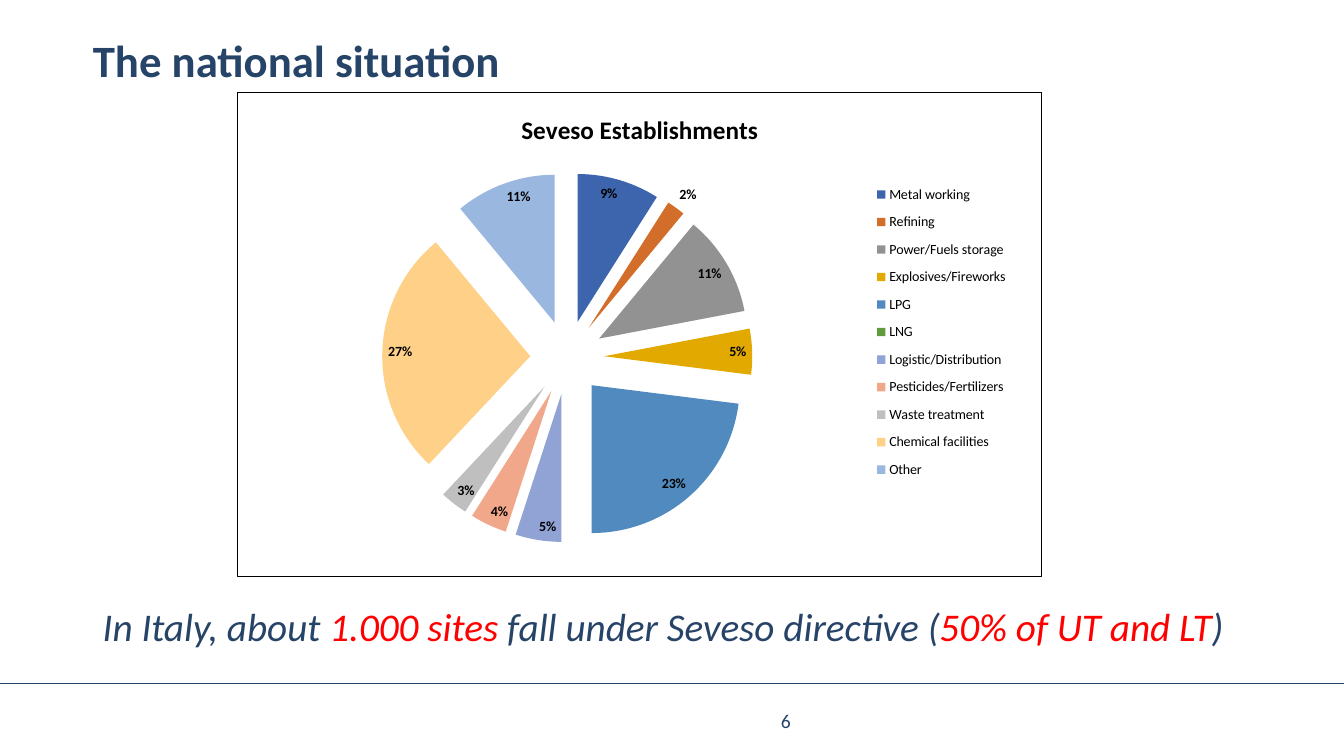
"""Build the slide on Seveso establishments in Italy."""
from lxml import etree
from pptx import Presentation
from pptx.chart.data import CategoryChartData
from pptx.dml.color import RGBColor
from pptx.enum.chart import XL_CHART_TYPE, XL_LABEL_POSITION, XL_LEGEND_POSITION
from pptx.enum.shapes import MSO_CONNECTOR
from pptx.enum.text import MSO_ANCHOR
from pptx.oxml import parse_xml
from pptx.oxml.ns import nsdecls, qn
from pptx.util import Cm, Pt

PIE = XL_CHART_TYPE.PIE
INSIDE = XL_LABEL_POSITION.INSIDE_END
OUTSIDE = XL_LABEL_POSITION.OUTSIDE_END
RIGHT = XL_LEGEND_POSITION.RIGHT
STRAIGHT = MSO_CONNECTOR.STRAIGHT
TOP = MSO_ANCHOR.TOP
MIDDLE = MSO_ANCHOR.MIDDLE

NAVY = RGBColor(0x26, 0x43, 0x68)
RED = RGBColor(0xFF, 0x00, 0x00)
BLACK = RGBColor(0x00, 0x00, 0x00)
WHITE = RGBColor(0xFF, 0xFF, 0xFF)
COBALT = RGBColor(0x3D, 0x65, 0xAD)
RUST = RGBColor(0xD2, 0x6E, 0x2A)
GREY = RGBColor(0x92, 0x92, 0x92)
GOLD = RGBColor(0xE2, 0xAA, 0x00)
BLUE = RGBColor(0x50, 0x8A, 0xBE)
GREEN = RGBColor(0x62, 0x9A, 0x3E)
LILAC = RGBColor(0x91, 0xA2, 0xD4)
SALMON = RGBColor(0xF1, 0xA7, 0x8A)
SILVER = RGBColor(0xBF, 0xBF, 0xBF)
PEACH = RGBColor(0xFE, 0xD0, 0x88)
SKY = RGBColor(0x9A, 0xB7, 0xDF)

SITES = [
    ("Metal working", 9, COBALT),
    ("Refining", 2, RUST),
    ("Power/Fuels storage", 11, GREY),
    ("Explosives/Fireworks", 5, GOLD),
    ("LPG", 23, BLUE),
    ("LNG", 0, GREEN),
    ("Logistic/Distribution", 5, LILAC),
    ("Pesticides/Fertilizers", 4, SALMON),
    ("Waste treatment", 3, SILVER),
    ("Chemical facilities", 27, PEACH),
    ("Other", 11, SKY),
]


class Deck:
    """Hold the style and the current slide."""

    def __init__(self, font, color):
        self.font, self.color = font, color
        self.show = Presentation()
        self.show.slide_width, self.show.slide_height = Cm(33.87), Cm(19.05)
        self.slide = self.show.slides.add_slide(self.show.slide_layouts[6])

    def style(self, font, size, color, bold=False, italic=False):
        font.name, font.size = self.font, Pt(size)
        font.color.rgb = color
        font.bold, font.italic = bold, italic

    def text(self, box, parts, size, pad=(0.25, 0.13), anchor=TOP, gap=None, **look):
        frame = self.slide.shapes.add_textbox(*map(Cm, box)).text_frame
        frame.word_wrap = True
        frame.vertical_anchor = anchor
        frame.margin_left = frame.margin_right = Cm(pad[0])
        frame.margin_top = frame.margin_bottom = Cm(pad[1])
        para = frame.paragraphs[0]
        para.line_spacing = gap
        for words, color in parts:
            run = para.add_run()
            run.text = words
            self.style(run.font, size, color, **look)

    def rule(self, left, right, top):
        line = self.slide.shapes.add_connector(
            STRAIGHT, Cm(left), Cm(top), Cm(right), Cm(top))
        line.line.color.rgb = self.color
        line.line.width = Pt(1)
        etree.SubElement(line._element.spPr, qn("a:effectLst"))

    def layout(self, x, y, w, h, inner=""):
        return parse_xml(
            f'<c:layout {nsdecls("c")}><c:manualLayout>{inner}'
            '<c:xMode val="edge"/><c:yMode val="edge"/>'
            f'<c:x val="{x}"/><c:y val="{y}"/><c:w val="{w}"/><c:h val="{h}"/>'
            '</c:manualLayout></c:layout>')

    def pie(self, box, title, rows, burst):
        data = CategoryChartData()
        data.categories = [name for name, _, _ in rows]
        data.add_series(title, [value for _, value, _ in rows])
        chart = self.slide.shapes.add_chart(PIE, *map(Cm, box), data).chart
        self.style(chart.font, 10, BLACK)
        chart.has_title = True
        chart.chart_title.text_frame.text = title
        head = chart.chart_title.text_frame.paragraphs[0].runs[0]
        self.style(head.font, 18, BLACK, bold=True)
        self.legend(chart)
        self.frame(chart)
        plot = chart.plots[0]
        plot.vary_by_categories = True
        self.slices(plot.series[0], rows, burst)

    def legend(self, chart):
        chart.has_legend = True
        key = chart.legend
        key.position, key.include_in_layout = RIGHT, False
        self.style(key.font, 10, BLACK)
        key._element.find(qn("c:legendPos")).addnext(
            self.layout(0.78, 0.17, 0.19, 0.65))

    def frame(self, chart):
        area = chart._chartSpace.chart.plotArea
        for old in area.findall(qn("c:layout")):
            area.remove(old)
        area.insert(0, self.layout(
            0.18, 0.165, 0.46, 0.765, '<c:layoutTarget val="inner"/>'))
        chart._chartSpace.chart.addnext(parse_xml(
            f'<c:spPr {nsdecls("c", "a")}>'
            f'<a:solidFill><a:srgbClr val="{WHITE}"/></a:solidFill>'
            f'<a:ln w="{Pt(0.75)}"><a:solidFill><a:srgbClr val="{BLACK}"/>'
            '</a:solidFill></a:ln></c:spPr>'))

    def slices(self, series, rows, burst):
        series._element.find(qn("c:tx")).addnext(
            parse_xml(f'<c:explosion {nsdecls("c")} val="{burst}"/>'))
        tags = series.data_labels
        tags.show_percentage, tags.show_value = True, False
        tags.number_format, tags.number_format_is_linked = "0%", False
        tags.position = INSIDE
        self.style(tags.font, 10, BLACK, bold=True)
        for spot, (_, value, color) in enumerate(rows):
            point = series.points[spot]
            point.format.fill.solid()
            point.format.fill.fore_color.rgb = color
            if value < 3:
                self.style(point.data_label.font, 10, BLACK, bold=True)
                point.data_label.position = OUTSIDE
        for tag in series._element.iter(qn("c:dLbl")):
            tag.find(qn("c:showVal")).set("val", "0")
            tag.find(qn("c:showPercent")).set("val", "1")


def main():
    deck = Deck("Calibri", NAVY)
    deck.rule(0, 33.87, 17.22)
    deck.text((2.34, 0.97, 30.12, 1.75), [("The national situation", NAVY)],
              32, pad=(0, 0), gap=0.9, bold=True)
    deck.text((2.34, 15.19, 29.41, 1.55), [
        ("In Italy, about ", NAVY),
        ("1.000 sites ", RED),
        ("fall under Seveso directive (", NAVY),
        ("50% of UT and LT", RED),
        (")", NAVY),
    ], 28, gap=0.9, italic=True)
    deck.text((19.43, 17.65, 7.62, 1.02), [("6", NAVY)], 14, anchor=MIDDLE)
    deck.pie((5.97, 2.32, 20.3, 12.22), "Seveso Establishments", SITES, 25)
    deck.show.save("out.pptx")


if __name__ == "__main__":
    main()
